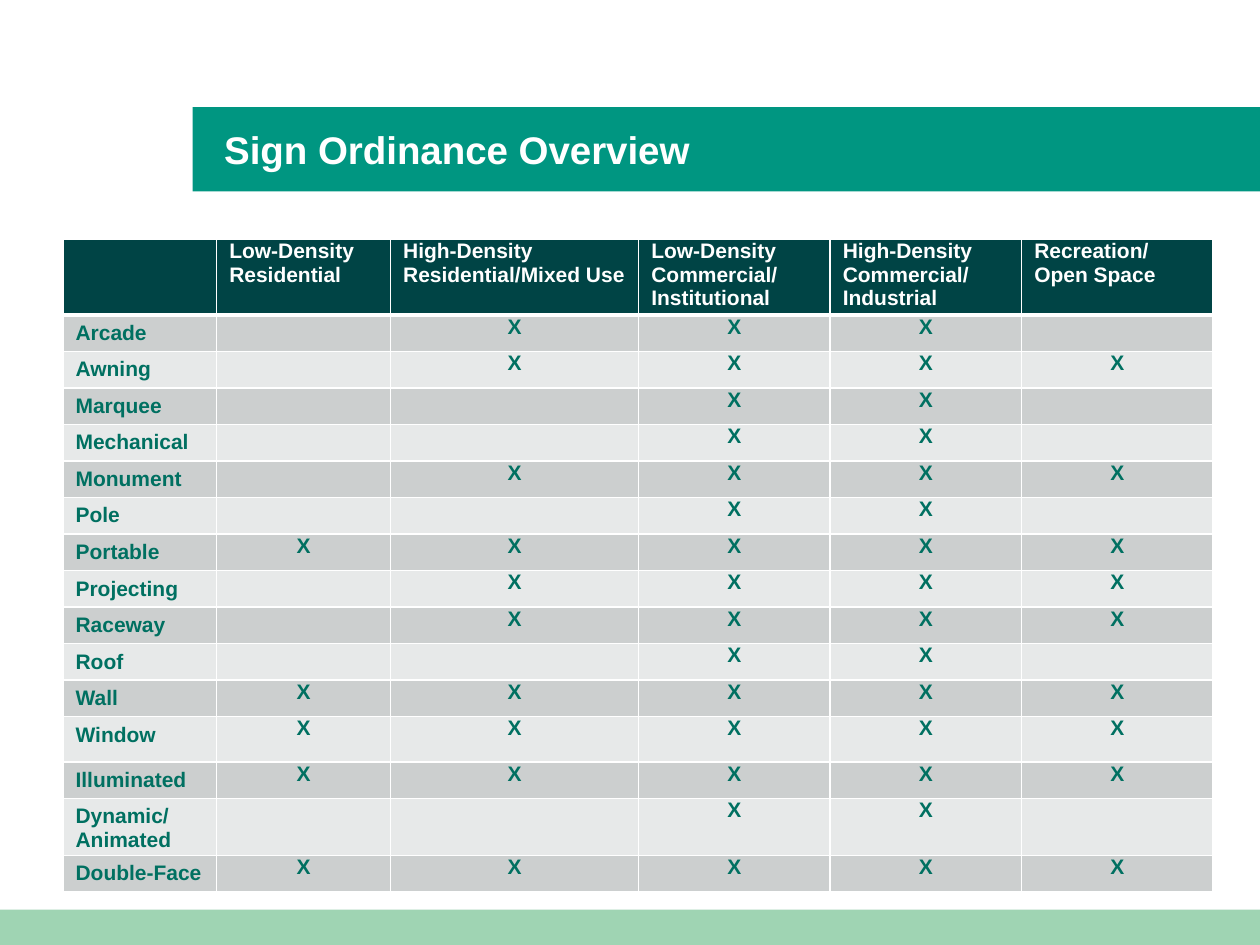
from lxml.etree import SubElement
from pptx import Presentation
from pptx.dml.color import RGBColor
from pptx.enum.shapes import MSO_SHAPE
from pptx.enum.text import MSO_ANCHOR, PP_ALIGN
from pptx.oxml.ns import qn
from pptx.util import Inches, Pt

WHITE = RGBColor(0xFF, 0xFF, 0xFF)
TEAL = RGBColor(0x00, 0x96, 0x81)
MINT = RGBColor(0x9F, 0xD4, 0xB3)
HEADER_GREEN = RGBColor(0x00, 0x44, 0x45)
TEXT_GREEN = RGBColor(0x00, 0x70, 0x61)
DARK_BAND = RGBColor(0xCC, 0xCF, 0xCF)
LIGHT_BAND = RGBColor(0xE7, 0xE9, 0xE9)

FONT = "Arial"
COLUMN_WIDTHS = [1.22, 1.38, 1.97, 1.52, 1.52, 1.52]
HEADER_HEIGHT, ROW_HEIGHT, WINDOW_HEIGHT = 0.51, 0.29, 0.36

ZONES = [
    "",
    "Low-Density Residential",
    "High-Density Residential/Mixed Use",
    "Low-Density Commercial/ Institutional",
    "High-Density Commercial/ Industrial",
    "Recreation/\nOpen Space",
]

# Sign type and its permission in each zone, in column order
SIGNS = [
    ("Arcade", "-XXX-"),
    ("Awning", "-XXXX"),
    ("Marquee", "--XX-"),
    ("Mechanical", "--XX-"),
    ("Monument", "-XXXX"),
    ("Pole", "--XX-"),
    ("Portable", "XXXXX"),
    ("Projecting", "-XXXX"),
    ("Raceway", "-XXXX"),
    ("Roof", "--XX-"),
    ("Wall", "XXXXX"),
    ("Window", "XXXXX"),
    ("Illuminated", "XXXXX"),
    ("Dynamic/ Animated", "--XX-"),
    ("Double-Face", "XXXXX"),
]


def style_paragraph(paragraph, size, color, align=PP_ALIGN.LEFT):
    paragraph.alignment = align
    font = paragraph.font
    font.name, font.size, font.bold = FONT, Pt(size), True
    font.color.rgb = color


def add_band(slide, left, top, width, height, color):
    band = slide.shapes.add_shape(
        MSO_SHAPE.RECTANGLE, Inches(left), Inches(top), Inches(width), Inches(height))
    band.shadow.inherit = False
    band.fill.solid()
    band.fill.fore_color.rgb = color
    band.line.fill.background()


def add_title(slide, text):
    title = slide.shapes.add_textbox(Inches(1.78), Inches(0.85), Inches(7.64), Inches(0.67))
    frame = title.text_frame
    frame.word_wrap = True
    frame.vertical_anchor = MSO_ANCHOR.MIDDLE
    frame.margin_left = frame.margin_right = frame.margin_top = frame.margin_bottom = 0
    frame.text = text
    style_paragraph(frame.paragraphs[0], 22, WHITE)


def set_borders(cell, top=1, bottom=1):
    properties = cell._tc.get_or_add_tcPr()
    for side, points in (("L", 1), ("R", 1), ("T", top), ("B", bottom)):
        line = SubElement(properties, qn(f"a:ln{side}"), w=str(Pt(points)))
        fill = SubElement(line, qn("a:solidFill"))
        SubElement(fill, qn("a:srgbClr"), val=str(WHITE))


def fill_cell(cell, text, color, background, align=PP_ALIGN.LEFT, margin_top=0):
    cell.margin_left = cell.margin_right = Inches(0.1)
    cell.margin_top, cell.margin_bottom = Inches(margin_top), 0
    cell.fill.solid()
    cell.fill.fore_color.rgb = background
    cell.text = text
    for paragraph in cell.text_frame.paragraphs:
        style_paragraph(paragraph, 12, color, align)


def add_sign_table(slide):
    row_heights = [HEADER_HEIGHT] + [
        WINDOW_HEIGHT if sign == "Window" else ROW_HEIGHT for sign, _ in SIGNS]
    table = slide.shapes.add_table(
        len(row_heights), len(ZONES), Inches(0.5), Inches(1.9),
        Inches(sum(COLUMN_WIDTHS)), Inches(sum(row_heights))).table
    for column, width in zip(table.columns, COLUMN_WIDTHS):
        column.width = Inches(width)
    for row, height in zip(table.rows, row_heights):
        row.height = Inches(height)

    # Zone headings
    for column, zone in enumerate(ZONES):
        heading = table.cell(0, column)
        set_borders(heading, bottom=3)
        fill_cell(heading, zone, WHITE, HEADER_GREEN)

    # Sign types and permissions
    for row, (sign, permissions) in enumerate(SIGNS, start=1):
        background = DARK_BAND if row % 2 else LIGHT_BAND
        for column in range(len(ZONES)):
            set_borders(table.cell(row, column), top=3 if row == 1 else 1)
        fill_cell(table.cell(row, 0), sign, TEXT_GREEN, background, margin_top=0.05)
        for column, mark in enumerate(permissions, start=1):
            fill_cell(table.cell(row, column), mark.replace("-", ""),
                      TEXT_GREEN, background, PP_ALIGN.CENTER)


def main():
    presentation = Presentation()
    presentation.slide_width, presentation.slide_height = Inches(10), Inches(7.5)
    slide = presentation.slides.add_slide(presentation.slide_layouts[6])

    # Title band and footer band
    add_band(slide, 1.53, 0.85, 8.47, 0.67, TEAL)
    add_band(slide, 0, 7.22, 10, 0.28, MINT)
    add_title(slide, "Sign Ordinance Overview")

    # Permitted signs by zone
    add_sign_table(slide)
    presentation.save("out.pptx")


if __name__ == "__main__":
    main()
